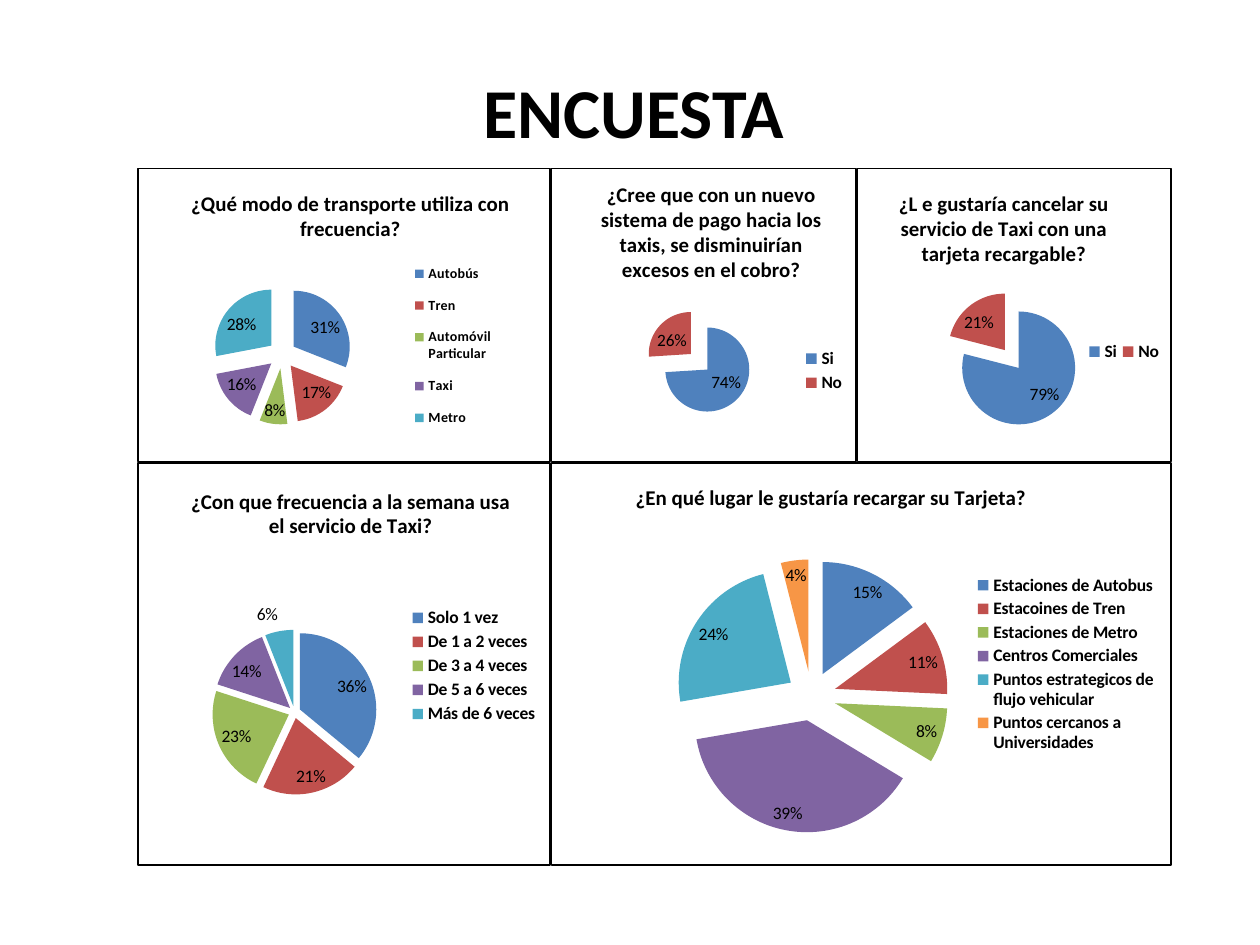
from dataclasses import dataclass

import pptx
import pptx.chart.data
import pptx.dml.color
import pptx.enum.chart
import pptx.enum.text
import pptx.oxml
import pptx.oxml.ns
import pptx.util
from pptx.util import Inches

qn = pptx.oxml.ns.qn


@dataclass(frozen=True)
class Theme:
    font: str = "Calibri"
    text: str = "000000"
    slices: tuple = ("4F81BD", "C0504D", "9BBB59", "8064A2", "4BACC6", "F79646")
    heading: int = 40
    question: int = 12
    label: int = 10
    small: int = 8
    border: float = 0.75


THEME = Theme()
COLUMNS = (1.09, 4.37, 6.8, 9.3)
ROWS = (1.33, 3.67, 6.87)


@dataclass(frozen=True)
class Survey:
    """One question; columns and row say which grid cells its chart fills.

    title_at, plot_at and legend_at are fractions of the chart."""
    question: str
    answers: dict
    columns: tuple
    row: int
    title_at: tuple
    plot_at: tuple
    legend_at: tuple
    explosion: int = 0
    first_explosion: int = 0
    legend_size: int = THEME.label


SURVEYS = (
    Survey("¿Qué modo de transporte utiliza con frecuencia?",
           {"Autobús": 31, "Tren": 17, "Automóvil Particular": 8,
            "Taxi": 16, "Metro": 28},
           (0, 1), 0, (0.12, 0.06), (0.18, 0.3, 0.34, 0.67),
           (0.65, 0.28, 0.23, 0.65), explosion=25, legend_size=THEME.small),
    Survey("¿Con que frecuencia a la semana usa el servicio de Taxi?",
           {"Solo 1 vez": 36, "De 1 a 2 veces": 21, "De 3 a 4 veces": 23,
            "De 5 a 6 veces": 14, "Más de 6 veces": 6},
           (0, 1), 1, (0.12, 0.05), (0.18, 0.28, 0.4, 0.68),
           (0.65, 0.35, 0.33, 0.31), explosion=8),
    Survey("¿Cree que con un nuevo sistema de pago hacia los taxis, "
           "se disminuirían excesos en el cobro?",
           {"Si": 74, "No": 26},
           (1, 2), 0, (0.15, 0.03), (0.31, 0.38, 0.35, 0.56),
           (0.82, 0.6, 0.15, 0.18), explosion=27),
    Survey("¿L e gustaría cancelar su servicio de Taxi con una "
           "tarjeta recargable?",
           {"Si": 79, "No": 21},
           (2, 3), 0, (0.12, 0.06), (0.29, 0.34, 0.36, 0.56),
           (0.72, 0.58, 0.26, 0.09), first_explosion=40),
    Survey("¿En qué lugar le gustaría recargar su Tarjeta?",
           {"Estaciones de Autobus": 15, "Estacoines de Tren": 11,
            "Estaciones de Metro": 8, "Centros Comerciales": 39,
            "Puntos estrategicos de flujo vehicular": 24,
            "Puntos cercanos a Universidades": 4},
           (1, 3), 1, (0.13, 0.04), (0.16, 0.24, 0.52, 0.68),
           (0.68, 0.27, 0.3, 0.46), explosion=22),
)


def set_format(target, values):
    for name, value in values.items():
        setattr(target, name, value)


def rgb(value):
    return pptx.dml.color.RGBColor.from_string(value)


def style_font(font, size, bold):
    set_format(font, {"name": THEME.font, "size": pptx.util.Pt(size), "bold": bold})
    font.color.rgb = rgb(THEME.text)


def chart_xml(markup):
    """Parse an element whose opening tag holds {ns} for the namespaces."""
    return pptx.oxml.parse_xml(markup.format(ns=pptx.oxml.ns.nsdecls("c", "a")))


def set_layout(element, fractions, anchor=None, inner=False):
    """Place a chart part by hand; its layout follows the anchor child."""
    for old in element.findall(qn("c:layout")):
        element.remove(old)
    target = '<c:layoutTarget val="inner"/>' if inner else ""
    modes = "".join(f'<c:{side}Mode val="edge"/>' for side in "xy")
    sizes = "".join(f'<c:{side} val="{value}"/>' for side, value in zip("xywh", fractions))
    layout = chart_xml("<c:layout {ns}><c:manualLayout>" + target + modes + sizes
                       + "</c:manualLayout></c:layout>")
    if anchor is None:
        element.insert(0, layout)
    else:
        element.find(qn(anchor)).addnext(layout)


def explode(element, anchor, percent):
    if percent:
        element.find(qn(anchor)).addnext(
            chart_xml(f'<c:explosion {{ns}} val="{percent}"/>'))


def add_border(chart):
    width = pptx.util.Pt(THEME.border)
    chart.element.find(qn("c:chart")).addnext(chart_xml(
        f'<c:spPr {{ns}}><a:noFill/><a:ln w="{width}"><a:solidFill>'
        f'<a:srgbClr val="{THEME.text}"/></a:solidFill></a:ln></c:spPr>'))


def color_slices(series, survey):
    explode(series._element, "c:tx", survey.explosion)
    for index, color in zip(range(len(survey.answers)), THEME.slices):
        fill = series.points[index].format.fill
        fill.solid()
        fill.fore_color.rgb = rgb(color)
    explode(series._element.find(qn("c:dPt")), "c:idx", survey.first_explosion)


def add_question(chart, survey):
    chart.has_title = True
    para = chart.chart_title.text_frame.paragraphs[0]
    span = para.add_run()
    span.text = survey.question
    style_font(span.font, THEME.question, True)
    set_layout(chart.chart_title._element, survey.title_at, "c:tx")


def add_legend(chart, survey):
    chart.has_legend = True
    set_format(chart.legend, {
        "position": pptx.enum.chart.XL_LEGEND_POSITION.RIGHT,
        "include_in_layout": False})
    style_font(chart.legend.font, survey.legend_size, True)
    set_layout(chart.legend._element, survey.legend_at, "c:legendPos")


def add_labels(plot):
    plot.has_data_labels = True
    set_format(plot.data_labels, {
        "show_percentage": True, "show_value": False,
        "number_format": "0%", "number_format_is_linked": False,
        "position": pptx.enum.chart.XL_LABEL_POSITION.BEST_FIT})
    style_font(plot.data_labels.font, THEME.label, False)


def add_survey_chart(page, survey):
    data = pptx.chart.data.CategoryChartData()
    data.categories = list(survey.answers)
    data.add_series(survey.question, list(survey.answers.values()))
    left, right = (COLUMNS[index] for index in survey.columns)
    top, bottom = ROWS[survey.row:survey.row + 2]
    chart = page.shapes.add_chart(
        pptx.enum.chart.XL_CHART_TYPE.PIE, Inches(left), Inches(top),
        Inches(right - left), Inches(bottom - top), data).chart
    style_font(chart.font, THEME.label, False)
    add_border(chart)
    add_question(chart, survey)
    add_legend(chart, survey)
    plot = chart.plots[0]
    plot.vary_by_categories = True
    add_labels(plot)
    color_slices(plot.series[0], survey)
    set_layout(chart.element.find(".//" + qn("c:plotArea")), survey.plot_at, inner=True)


def add_heading(page, text):
    box = page.shapes.title
    set_format(box, {"left": Inches(0.78), "top": Inches(0.47),
                     "width": Inches(8.5), "height": Inches(1.49)})
    set_format(box.text_frame, {
        "text": text, "margin_top": Inches(0.07),
        "vertical_anchor": pptx.enum.text.MSO_ANCHOR.TOP})
    para = box.text_frame.paragraphs[0]
    para.alignment = pptx.enum.text.PP_ALIGN.CENTER
    style_font(para.runs[0].font, THEME.heading, True)


def main():
    deck = pptx.Presentation()
    set_format(deck, {"slide_width": Inches(10), "slide_height": Inches(7.5)})
    page = deck.slides.add_slide(deck.slide_layouts[5])
    add_heading(page, "ENCUESTA")
    for survey in SURVEYS:
        add_survey_chart(page, survey)
    deck.save("out.pptx")


if __name__ == "__main__":
    main()
